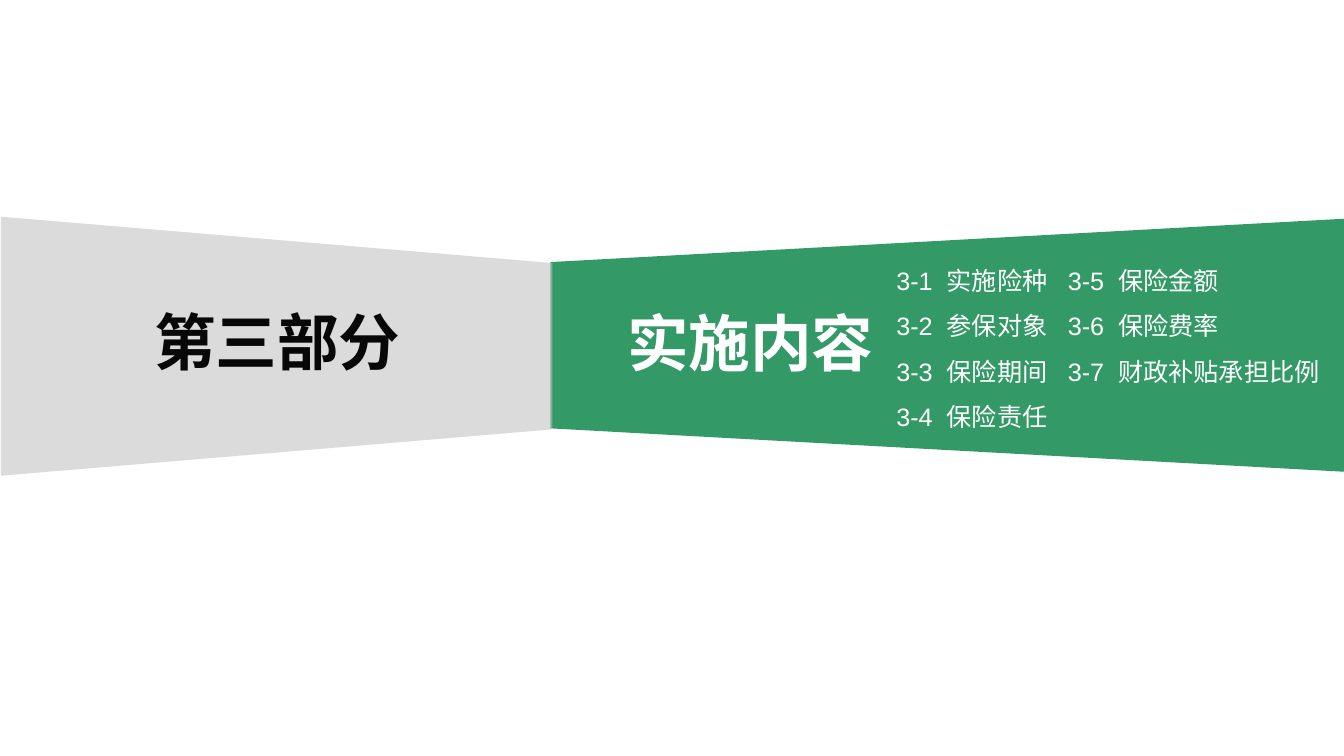
from lxml import etree
from pptx import Presentation
from pptx import util as u
from pptx.dml.color import RGBColor
from pptx.enum import text
from pptx.oxml import ns

# Content
PART = "第三部分"
TITLE = "实施内容"
# Each list: left, top, width, height, then (number, label, label offset)
LISTS = [
    ((8.79, 2.43, 1.96, 1.92), [
        ("3-1", "实施险种", 0.49),
        ("3-2", "参保对象", 0.49),
        ("3-3", "保险期间", 0.49),
        ("3-4", "保险责任", 0.49),
    ]),
    ((10.49, 2.43, 2.84, 1.46), [
        ("3-5", "保险金额", 0.49),
        ("3-6", "保险费率", 0.49),
        ("3-7", "财政补贴承担比例", 0.56),
    ]),
]
COLORS = {"green": "339966", "gray": "C0C0C0", "black": "080808", "white": "FFFFFF"}
# Each panel: colour, opacity in percent, corner points
PANELS = [
    ("green", 100, [(13.33, 4.68), (5.46, 4.25), (5.46, 2.6), (13.33, 2.17)]),
    ("gray", 56, [(0.01, 2.15), (5.48, 2.61), (5.48, 4.26), (0.01, 4.72)]),
]
LATIN, CJK = "Arial", "Noto Sans CJK SC"

prs = Presentation()
prs.slide_width, prs.slide_height = u.Inches(13.33), u.Inches(7.5)
slide = prs.slides.add_slide(prs.slide_layouts[3])
shapes = slide.shapes


def place(sp, box, anchor):
    sp.left, sp.top, sp.width, sp.height = map(u.Inches, box)
    tf = sp.text_frame
    tf.word_wrap = True
    tf.auto_size = text.MSO_AUTO_SIZE.NONE
    tf.vertical_anchor = anchor
    return tf


def style(p, size, color, bold=False, latin=LATIN):
    p.alignment = text.PP_ALIGN.LEFT
    for r in p.runs:
        r.font.size, r.font.bold, r.font.name = u.Pt(size), bold, latin
        r.font.color.rgb = RGBColor.from_string(COLORS[color])
        ea = etree.SubElement(r.font._element, ns.qn("a:ea"))
        ea.set("typeface", CJK)


# Panels, behind the text
for layer, (color, opacity, points) in enumerate(PANELS):
    corners = [(u.Inches(x), u.Inches(y)) for x, y in points]
    builder = shapes.build_freeform(*corners[0])
    builder.add_line_segments(corners[1:], close=True)
    sp = builder.convert_to_shape()
    sp.shadow.inherit = False
    sp.line.fill.background()
    sp.fill.solid()
    sp.fill.fore_color.rgb = RGBColor.from_string(COLORS[color])
    if opacity < 100:
        clr = sp._element.spPr.find(".//" + ns.qn("a:srgbClr"))
        etree.SubElement(clr, ns.qn("a:alpha")).set("val", str(opacity * 1000))
    shapes._spTree.insert(2 + layer, sp._element)

# Part label and title
part = shapes.add_textbox(0, 0, 0, 0)
headings = [
    (part, PART, (1.43, 2.97, 2.88, 0.84), "black", LATIN),
    (shapes.title, TITLE, (6.12, 2.97, 2.81, 0.84), "white", CJK),
]
for sp, words, box, color, latin in headings:
    tf = place(sp, box, text.MSO_ANCHOR.TOP)
    tf.text = words
    style(tf.paragraphs[0], 44, color, True, latin)

# Section lists, labels aligned by a tab stop
for sp, (box, items) in zip(list(slide.placeholders)[1:], LISTS):
    tf = place(sp, box, text.MSO_ANCHOR.TOP)
    tf.text = "\n".join(f"{number}\t{label}" for number, label, _ in items)
    for p, (_, _, offset) in zip(tf.paragraphs, items):
        pPr = p._p.get_or_add_pPr()
        pPr.set("marL", "0")
        pPr.set("indent", "0")
        etree.SubElement(pPr, ns.qn("a:buNone"))
        tabs = etree.SubElement(pPr, ns.qn("a:tabLst"))
        tab = etree.SubElement(tabs, ns.qn("a:tab"))
        tab.set("pos", str(u.Inches(offset)))
        tab.set("algn", "l")
        p.line_spacing, p.space_before = 1.5, u.Pt(0)
        style(p, 18, "white")

prs.save("out.pptx")
